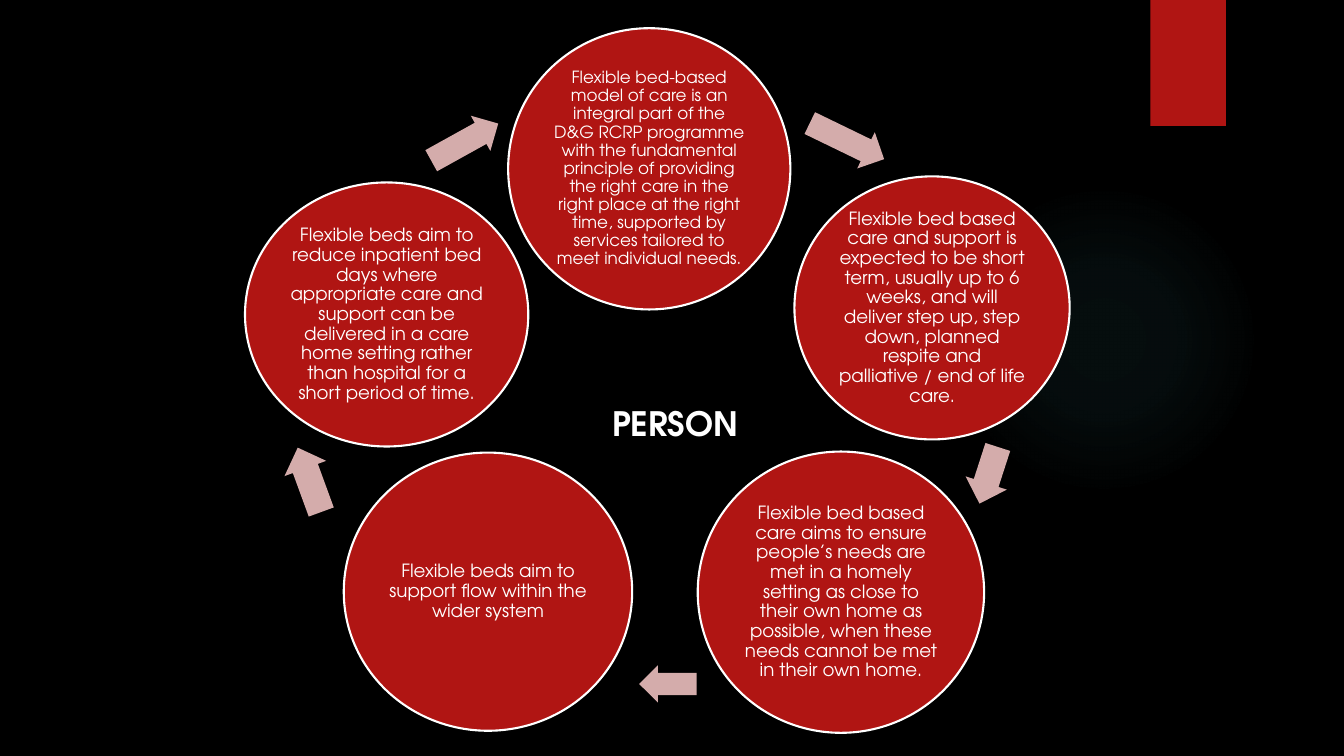
"""Build a five-step care cycle around the person."""
from dataclasses import dataclass

from lxml import etree
from pptx import Presentation
from pptx.dml.color import RGBColor
from pptx.enum.shapes import MSO_SHAPE
from pptx.enum.text import MSO_ANCHOR, MSO_AUTO_SIZE, PP_ALIGN
from pptx.oxml import parse_xml
from pptx.oxml.ns import qn
from pptx.util import Inches, Pt

OVAL, ARROW, RECT = MSO_SHAPE.OVAL, MSO_SHAPE.RIGHT_ARROW, MSO_SHAPE.RECTANGLE
CENTER, LEFT = PP_ALIGN.CENTER, PP_ALIGN.LEFT
MIDDLE, TOP = MSO_ANCHOR.MIDDLE, MSO_ANCHOR.TOP
NO_FIT = MSO_AUTO_SIZE.NONE
TITLE_ONLY = 5


@dataclass(frozen=True)
class Theme:
    """Colours, font and type sizes."""
    back: str = "000000"
    red: str = "B01513"
    pink: str = "D4ACAB"
    white: str = "FFFFFF"
    glow: str = "50B9C1"
    font: str = "TeX Gyre Adventor"
    title: int = 24
    body: int = 13
    small: int = 12


T = Theme()
HUB = "PERSON"
HUB_BOX = (50.68, 56, 11.78, 6.67)
TAB_BOX = (88.41, 8.33, 5.63, 16.67)
GLOW_BOX = (82.15, 44.93, 23.11, 41.07)
GLOW_STOPS = [(0, 7), (36, 6), (69, 0)]

STEPS = [
    ("Flexible bed-based model of care is an integral part of the D&G RCRP "
     "programme with the fundamental principle of providing the right care in "
     "the right place at the right time, supported by services tailored to "
     "meet individual needs.",
     T.small, (48.31, 22.33, 21, 37.2), (63.02, 18.67, 6.15, 5.33), 25.9),
    ("Flexible bed based care and support is expected to be short term, "
     "usually up to 6 weeks, and will deliver step up, step down, planned "
     "respite and palliative / end of life care.",
     T.body, (69.35, 40.73, 20.48, 34.8), (73.56, 62.87, 4.43, 5.73), 107.9),
    ("Flexible bed based care aims to ensure people’s needs are met in a "
     "homely setting as close to their own home as possible, when these needs "
     "cannot be met in their own home.",
     T.body, (62.57, 78.33, 21.31, 37.2), (49.7, 90.47, 4.28, 4.93), 180),
    ("Flexible beds aim to support flow within the wider system",
     T.body, (36.31, 78.27, 21.46, 36.8), (23.03, 63.47, 5.1, 5.87), 249.9),
    ("Flexible beds aim to reduce inpatient bed days where appropriate care "
     "and support can be delivered in a care home setting rather than "
     "hospital for a short period of time.",
     T.body, (28.77, 41.6, 21.08, 34.93), (34.58, 18.8, 5.7, 5.33), 331),
]

prs = Presentation()
prs.slide_width, prs.slide_height = Inches(13.33), Inches(7.5)


def rgb(color):
    """Turn a hex string into a colour."""
    return RGBColor.from_string(color)


def place(box):
    """Turn centre and size in percent of the slide into left, top, width, height."""
    cx, cy, w, h = box
    shares = (cx - w / 2, cy - h / 2, w, h)
    sides = (prs.slide_width, prs.slide_height) * 2
    return [round(share * side / 100) for share, side in zip(shares, sides)]


def add_plain(slide, kind, box, color):
    """Add a filled shape without line or shadow."""
    s = slide.shapes.add_shape(kind, *place(box))
    s.shadow.inherit = False
    s.fill.solid()
    s.fill.fore_color.rgb = rgb(color)
    s.line.fill.background()
    return s


def set_text(s, text, size, align, anchor):
    """Write one styled paragraph into a shape."""
    tf = s.text_frame
    tf.word_wrap, tf.auto_size, tf.vertical_anchor = True, NO_FIT, anchor
    p = tf.paragraphs[0]
    p.text, p.alignment = text, align
    p.font.name, p.font.size = T.font, Pt(size)
    p.font.color.rgb = rgb(T.white)
    return p


def add_glow(slide):
    """Add the faint radial light."""
    s = add_plain(slide, OVAL, GLOW_BOX, T.glow)
    stops = "".join(
        f'<a:gs pos="{pos * 1000}"><a:srgbClr val="{T.glow}">'
        f'<a:alpha val="{alpha * 1000}"/></a:srgbClr></a:gs>'
        for pos, alpha in GLOW_STOPS)
    grad = parse_xml(
        '<a:gradFill xmlns:a="http://schemas.openxmlformats.org/drawingml/2006/main">'
        f'<a:gsLst>{stops}</a:gsLst><a:path path="circle">'
        '<a:fillToRect l="50000" t="50000" r="50000" b="50000"/></a:path></a:gradFill>')
    pr = s.element.spPr
    pr.replace(pr.find(qn("a:solidFill")), grad)


def add_tab(slide):
    """Add the red corner tab with its soft shadow."""
    s = add_plain(slide, RECT, TAB_BOX, T.red)
    effects = s.element.spPr.find(qn("a:effectLst"))
    shadow = etree.SubElement(effects, qn("a:outerShdw"), blurRad=str(Pt(3)),
                              dist=str(Pt(2)), dir="5400000", rotWithShape="0")
    color = etree.SubElement(shadow, qn("a:srgbClr"), val=T.back)
    etree.SubElement(color, qn("a:alpha"), val="45000")


def add_step(slide, text, size, circle, arrow, angle):
    """Add one circle and the arrow to the next one."""
    s = add_plain(slide, OVAL, circle, T.red)
    s.line.color.rgb = rgb(T.white)
    s.line.width = Pt(1.5)
    tf = s.text_frame
    tf.margin_left = tf.margin_right = tf.margin_top = tf.margin_bottom = Inches(0.02)
    set_text(s, text, size, CENTER, MIDDLE).line_spacing = 0.9
    s = add_plain(slide, ARROW, arrow, T.pink)
    s.adjustments[0], s.adjustments[1] = 0.6, 0.5
    s.rotation = angle


def main():
    """Build and save the slide."""
    slide = prs.slides.add_slide(prs.slide_layouts[TITLE_ONLY])
    slide.background.fill.solid()
    slide.background.fill.fore_color.rgb = rgb(T.back)
    add_glow(slide)
    add_tab(slide)
    for step in STEPS:
        add_step(slide, *step)
    hub = slide.shapes.title
    hub.left, hub.top, hub.width, hub.height = place(HUB_BOX)
    set_text(hub, HUB, T.title, LEFT, TOP).font.bold = True
    prs.save("out.pptx")


if __name__ == "__main__":
    main()
